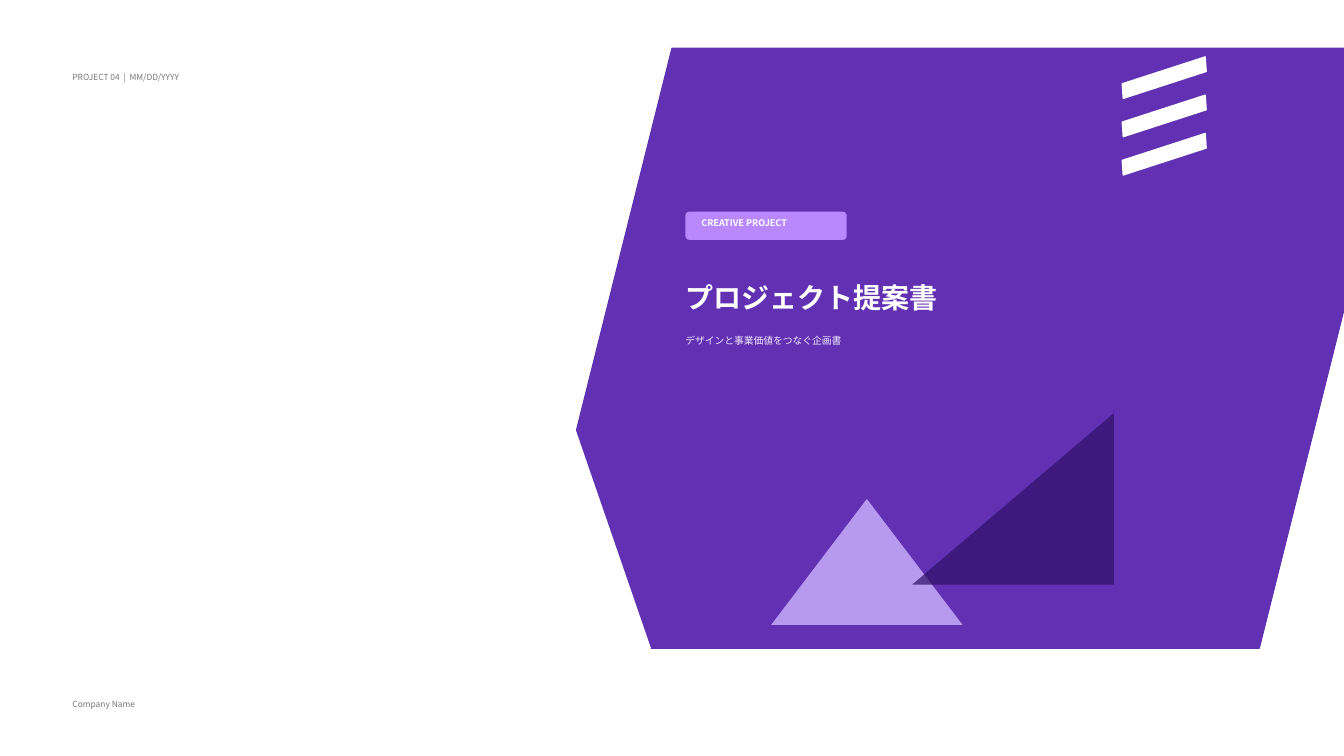
from lxml.etree import SubElement
from pptx import Presentation
from pptx.dml.color import RGBColor
from pptx.enum.shapes import MSO_SHAPE
from pptx.enum.text import MSO_ANCHOR, MSO_AUTO_SIZE, PP_ALIGN
from pptx.oxml.ns import qn
from pptx.util import Inches, Pt

COLORS = {
    "white": "FFFFFF",
    "panel": "6230B2",
    "lavender": "CDB4FF",
    "indigo": "2E0F67",
    "badge": "B988FF",
    "subtitle": "F2EAFE",
    "muted": "777777",
}
FONT = "Noto Sans CJK JP"
CELL = Inches(0.1)
COLUMNS, ROWS = 133.33, 75


class CoverBuilder:
    def __init__(self, deck):
        self.page = deck.slides.add_slide(deck.slide_layouts[5])
        self.paint(self.page.background.fill, "white")

    def grid(self, *cells):
        return [round(cell * CELL) for cell in cells]

    def paint(self, fill, color):
        fill.solid()
        fill.fore_color.rgb = RGBColor.from_string(COLORS[color])

    def shape(self, kind, place, color, outlined=False, opacity=None):
        shape = self.page.shapes.add_shape(kind, *self.grid(*place))
        shape.shadow.inherit = False
        self.paint(shape.fill, color)
        if outlined:
            self.paint(shape.line.fill, color)
            shape.line.width = Pt(1)
        else:
            shape.line.fill.background()
        if opacity is not None:
            tint = shape._element.spPr.find(qn("a:solidFill"))[0]
            SubElement(tint, qn("a:alpha"), val=str(opacity * 1000))
        return shape

    def set_text(self, box, words, size, color, bold, flush):
        frame = box.text_frame
        frame.text = words
        frame.word_wrap = True
        frame.auto_size = MSO_AUTO_SIZE.NONE
        frame.vertical_anchor = MSO_ANCHOR.MIDDLE
        if flush:
            frame.margin_left = frame.margin_right = 0
            frame.margin_top = frame.margin_bottom = 0
        para = frame.paragraphs[0]
        para.alignment = PP_ALIGN.LEFT
        para.font.size = Pt(size)
        para.font.bold = bold
        self.paint(para.font.fill, color)
        para.font.name = FONT
        defaults = para._p.pPr.find(qn("a:defRPr"))
        SubElement(defaults, qn("a:ea"), typeface=FONT)

    def text(self, words, place, size, color, bold=False, flush=False):
        box = self.page.shapes.add_textbox(*self.grid(*place))
        self.set_text(box, words, size, color, bold, flush)

    def title(self, words, place, size, color):
        box = self.page.shapes.title
        box.left, box.top, box.width, box.height = self.grid(*place)
        self.set_text(box, words, size, color, bold=True, flush=True)
        self.page.shapes._spTree.append(box._element)


def main():
    deck = Presentation()
    deck.slide_width = round(COLUMNS * CELL)
    deck.slide_height = ROWS * CELL
    cover = CoverBuilder(deck)

    panel_top, panel_height = 4.8, 59.5
    cover.shape(MSO_SHAPE.PARALLELOGRAM, (51.8, panel_top, 88, panel_height),
                "panel", outlined=True)
    cover.shape(MSO_SHAPE.RIGHT_TRIANGLE, (44, panel_top, 20.5, panel_height),
                "white", outlined=True)
    for index in range(3):
        stripe = cover.shape(MSO_SHAPE.PARALLELOGRAM,
                             (111, 7 + 3.8 * index, 9, 1.4), "white", outlined=True)
        stripe.rotation = 342

    cover.shape(MSO_SHAPE.ISOSCELES_TRIANGLE, (76.5, 49.5, 19, 12.5),
                "lavender", opacity=80)
    slope = cover.shape(MSO_SHAPE.RIGHT_TRIANGLE, (90.5, 41, 20, 17),
                        "indigo", opacity=70)
    slope._element.spPr.find(qn("a:xfrm")).set("flipH", "1")

    margin, content = 6.2, 68
    cover.text("PROJECT 04  |  MM/DD/YYYY", (margin, 6.7, 27, 1.8), 6, "muted")
    badge = cover.shape(MSO_SHAPE.ROUNDED_RECTANGLE, (content, 21, 16, 2.8), "badge")
    badge.adjustments[0] = 0.14
    cover.text("CREATIVE PROJECT", (content + 0.6, 21.5, 14.8, 1.2), 6.5,
               "white", bold=True)
    cover.title("プロジェクト提案書", (content, 27.2, 50, 4.5), 20, "white")
    cover.text("デザインと事業価値をつなぐ企画書", (content, 32.7, 50, 2.2), 7,
               "subtitle", flush=True)
    cover.text("Company Name", (margin, 69, 15, 1.8), 6, "muted")

    deck.save("out.pptx")


if __name__ == "__main__":
    main()
